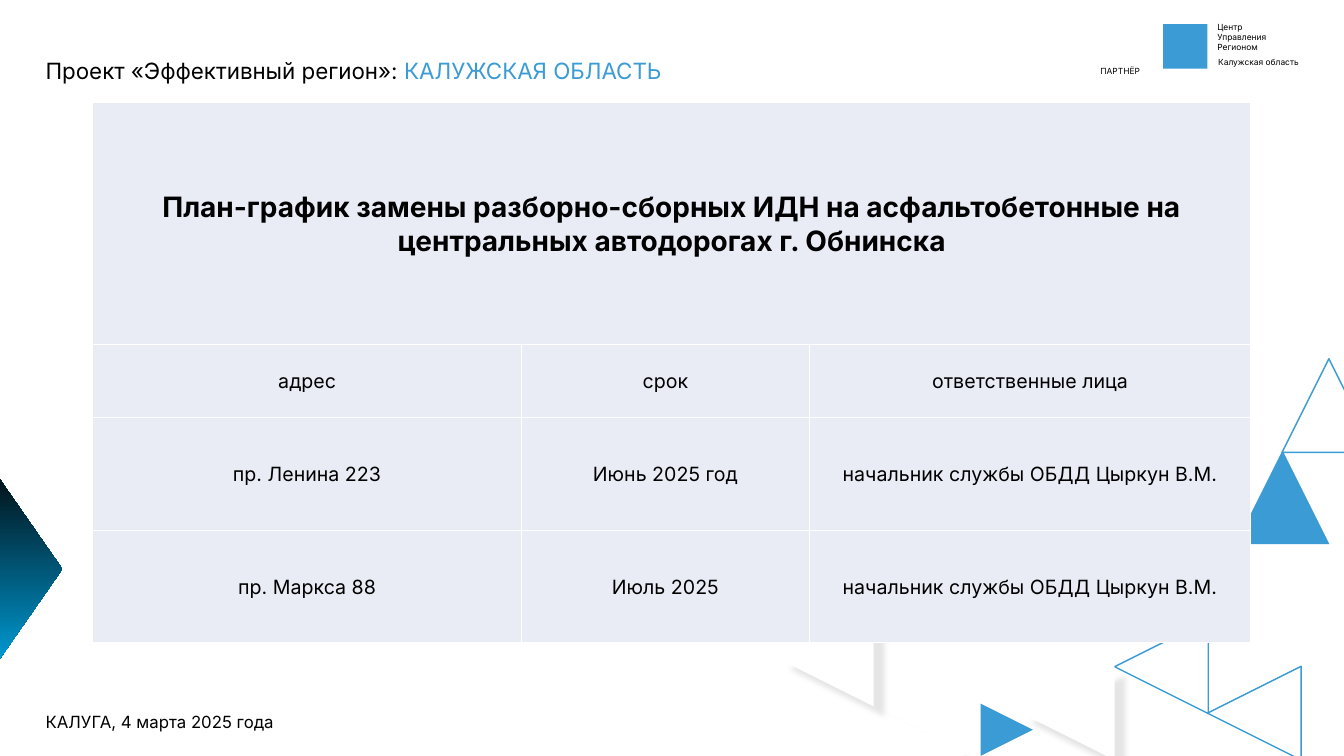
import pptx
import pptx.util
import pptx.dml.color
import pptx.enum.shapes
import pptx.enum.text
import pptx.oxml
import pptx.oxml.ns

Cm, Pt = pptx.util.Cm, pptx.util.Pt
KIND = pptx.enum.shapes.MSO_SHAPE
ALIGN = pptx.enum.text.PP_ALIGN
FONT = "Inter"
BLUE, BLACK, WHITE, PALE = "3A9BD5", "000000", "FFFFFF", "E9EBF5"

# left, top, width, height in cm; lines of (text, size, colour) runs; align; line spacing
LABELS = [
    ((30.43, 0.43, 3.4, 1.02), [[("Центр", 6, BLACK)], [("Управления", 6, BLACK)],
                                [("Регионом", 6, BLACK)]], ALIGN.LEFT, None),
    ((30.45, 1.32, 3.4, 0.5), [[("Калужская область", 6, BLACK)]], ALIGN.LEFT, None),
    ((27.25, 1.55, 1.96, 0.5), [[("ПАРТНЁР", 6, BLACK)]], ALIGN.CENTER, None),
    ((0.9, -0.2, 18, 2.06), [[("Проект «Эффективный регион»: ", 16, BLACK),
                              ("КАЛУЖСКАЯ ОБЛАСТЬ", 16, BLUE)]], ALIGN.LEFT, 62),
    ((0.9, 16.12, 8, 2.06), [[("КАЛУГА, 4 марта 2025 года", 12, BLACK)]],
     ALIGN.LEFT, 62),
]
# left, top, size in cm; rotation; look
SIDE = 2.36
PEAKS = [
    (31.14, 11.35, SIDE, 0, "solid"),
    (32.31, 9.04, SIDE, 0, "line"),
    (30.43, 16.79, SIDE, 270, "line"),
    (28.09, 15.62, SIDE, 270, "line"),
    (25.73, 16.79, SIDE, 270, "shade"),
    (22, 17.81, SIDE, 90, "shade"),
    (19.66, 15.44, SIDE, 270, "shade"),
    (24.71, 17.73, 1.32, 90, "solid"),
]
ARROW = (-3, 13.16, 6.78, SIDE)
STOPS = [(0, "010101"), (5, "00AEEF"), (93, "010101"), (100, "00AEEF")]
MARK = (29.31, 0.61, 1.12, 1.12)

HEAD = "План-график замены разборно-сборных ИДН на асфальтобетонные на центральных автодорогах г. Обнинска"
CHIEF = "начальник службы ОБДД Цыркун В.М."
ROWS = [
    (HEAD, "", ""),
    ("адрес", "срок", "ответственные лица"),
    ("пр. Ленина 223", "Июнь 2025 год", CHIEF),
    ("пр. Маркса 88", "Июль 2025", CHIEF),
]
COLS = [10.8, 7.26, 11.12]
HIGH = [6.12, 1.83, 2.84, 2.84]


def rgb(code):
    return pptx.dml.color.RGBColor.from_string(code)


def node(body):
    """Make an XML element in the drawing namespace."""
    tag, rest = body[1:].split(" ", 1)
    space = pptx.oxml.ns.nsdecls("a")
    return pptx.oxml.parse_xml(f"<{tag} {space} {rest}")


def paint(run, size, code, bold=False):
    run.font.name, run.font.size, run.font.bold = FONT, Pt(size), bold
    run.font.color.rgb = rgb(code)


def draw(kind, box, turn=0, fill=None, line=None):
    form = slide.shapes.add_shape(kind, *map(Cm, box))
    form.shadow.inherit = False
    form.rotation = turn
    if fill:
        form.fill.solid()
        form.fill.fore_color.rgb = rgb(fill)
    else:
        form.fill.background()
    if line:
        form.line.color.rgb = rgb(line)
        form.line.width = Pt(1)
    else:
        form.line.fill.background()
    return form


def shade(form):
    """Cast a soft grey shadow to the lower right."""
    form._element.spPr.find(pptx.oxml.ns.qn("a:effectLst")).append(node(
        f'<a:outerShdw blurRad="{Pt(4)}" dist="{Pt(10)}" dir="2700000" algn="tl" '
        'rotWithShape="0"><a:srgbClr val="BFBFBF"><a:alpha val="40000"/>'
        '</a:srgbClr></a:outerShdw>'))


def blend(form, stops):
    """Swap the fill for a gradient running from right to left."""
    marks = "".join(f'<a:gs pos="{at * 1000}"><a:srgbClr val="{code}"/></a:gs>'
                    for at, code in stops)
    old = form._element.spPr.find(pptx.oxml.ns.qn("a:noFill"))
    old.getparent().replace(old, node(
        f'<a:gradFill rotWithShape="1"><a:gsLst>{marks}</a:gsLst>'
        '<a:lin ang="10800000" scaled="0"/></a:gradFill>'))


def label(box, lines, align, space):
    frame = slide.shapes.add_textbox(*map(Cm, box)).text_frame
    frame.word_wrap = True
    for i, line in enumerate(lines):
        para = frame.add_paragraph() if i else frame.paragraphs[0]
        para.alignment = align
        if space:
            para.line_spacing = Pt(space)
        for text, size, code in line:
            run = para.add_run()
            run.text = text
            paint(run, size, code)


def edge(cell):
    """Give a cell thin white borders on all sides."""
    props = cell._tc.get_or_add_tcPr()
    for i, side in enumerate(("lnL", "lnR", "lnT", "lnB")):
        props.insert(i, node(
            f'<a:{side} w="{Pt(1)}"><a:solidFill><a:srgbClr val="{WHITE}"/>'
            f'</a:solidFill></a:{side}>'))


def plan():
    grid = slide.shapes.add_table(len(ROWS), len(COLS), Cm(2.34), Cm(2.57),
                                  Cm(sum(COLS)), Cm(sum(HIGH))).table
    grid.first_row = grid.horz_banding = False
    for col, width in zip(grid.columns, COLS):
        col.width = Cm(width)
    for row, height in zip(grid.rows, HIGH):
        row.height = Cm(height)
    grid.cell(0, 0).merge(grid.cell(0, len(COLS) - 1))
    for r, row in enumerate(ROWS):
        for c, text in enumerate(row):
            cell = grid.cell(r, c)
            cell.fill.solid()
            cell.fill.fore_color.rgb = rgb(PALE)
            edge(cell)
            cell.margin_left = cell.margin_right = cell.margin_top = Cm(0.03)
            cell.margin_bottom = 0
            cell.vertical_anchor = pptx.enum.text.MSO_ANCHOR.MIDDLE
            if text:
                para = cell.text_frame.paragraphs[0]
                para.text = text
                para.alignment = ALIGN.CENTER
                paint(para.runs[0], 14 if r else 20, BLACK, r == 0)


deck = pptx.Presentation()
deck.slide_width, deck.slide_height = Cm(33.87), Cm(19.05)
slide = deck.slides.add_slide(deck.slide_layouts[6])

draw(KIND.RECTANGLE, MARK, fill=BLUE)
for item in LABELS:
    label(*item)
for left, top, size, turn, look in PEAKS:
    peak = draw(KIND.ISOSCELES_TRIANGLE, (left, top, size, size), turn,
                fill={"solid": BLUE, "shade": WHITE}.get(look),
                line=BLUE if look == "line" else None)
    if look == "shade":
        shade(peak)
blend(draw(KIND.ISOSCELES_TRIANGLE, ARROW, 90), STOPS)
plan()

deck.save("out.pptx")
